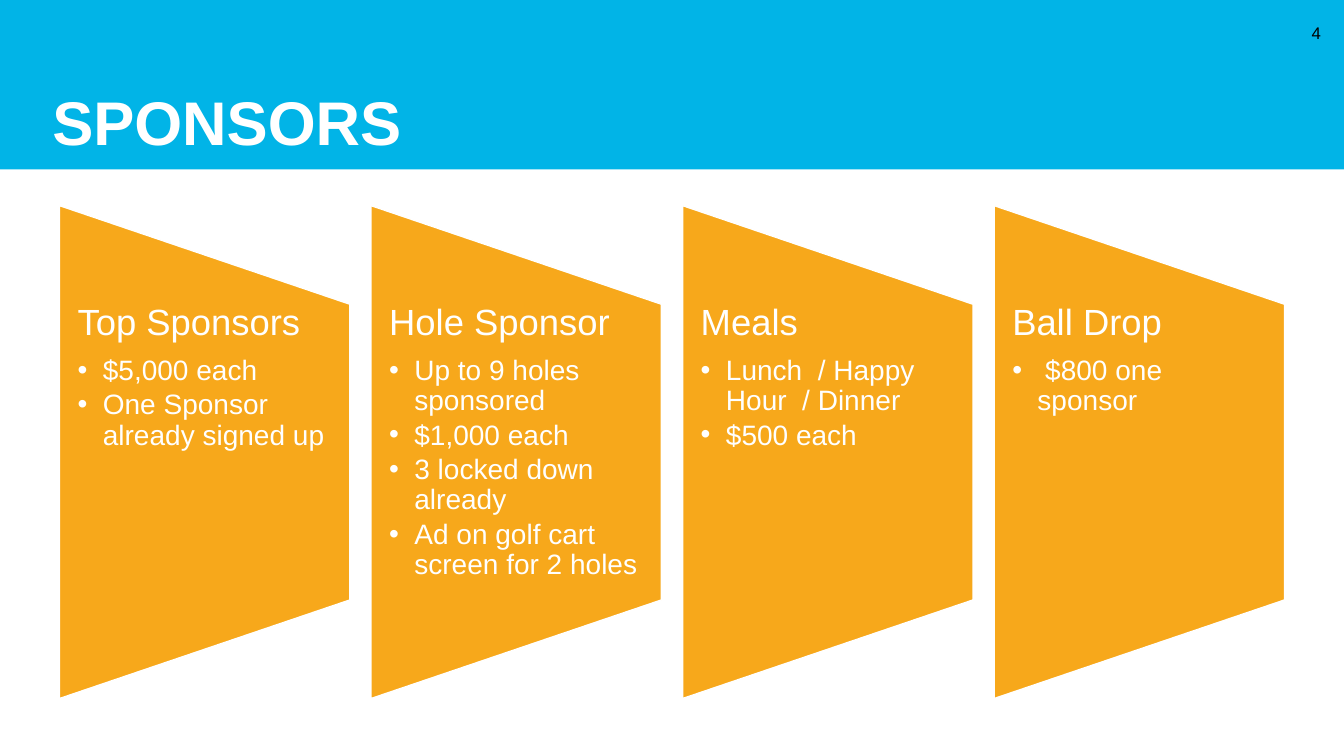
from lxml import etree
from pptx import Presentation
from pptx.dml.color import RGBColor
from pptx.enum.shapes import MSO_SHAPE
from pptx.enum.text import MSO_ANCHOR, PP_ALIGN
from pptx.oxml.ns import qn
from pptx.util import Inches, Pt

RECT = MSO_SHAPE.RECTANGLE
TRAP = MSO_SHAPE.FLOWCHART_MANUAL_OPERATION
TOP, MIDDLE, BOTTOM = MSO_ANCHOR.TOP, MSO_ANCHOR.MIDDLE, MSO_ANCHOR.BOTTOM
LEFT, RIGHT = PP_ALIGN.LEFT, PP_ALIGN.RIGHT

COLORS = {"blue": "01B4E7", "gold": "F7A81B", "white": "FFFFFF", "black": "000000"}
WIDTH, HEIGHT = 13.33, 7.5
MARGIN, CARD_W, CARD_H = 0.59, 2.88, 4.89
SPONSORS = [
    ("Top Sponsors", ["$5,000 each", "One Sponsor already signed up"]),
    ("Hole Sponsor", ["Up to 9 holes sponsored", "$1,000 each",
                      "3 locked down already", "Ad on golf cart screen for 2 holes"]),
    ("Meals", ["Lunch  / Happy Hour  / Dinner", "$500 each"]),
    ("Ball Drop", [" $800 one sponsor"]),
]


def color(name):
    return RGBColor.from_string(COLORS[name])


def add_block(slide, kind, box, fill):
    shape = slide.shapes.add_shape(kind, *map(Inches, box))
    shape.shadow.inherit = False
    shape.fill.solid()
    shape.fill.fore_color.rgb = color(fill)
    shape.line.fill.background()
    return shape


def add_frame(slide, box, insets, anchor):
    frame = slide.shapes.add_textbox(*map(Inches, box)).text_frame
    frame.word_wrap = True
    frame.vertical_anchor = anchor
    (frame.margin_left, frame.margin_top,
     frame.margin_right, frame.margin_bottom) = map(Inches, insets)
    return frame


def style(para, size, tint="white", bold=False, align=LEFT):
    para.alignment = align
    font = para.runs[0].font
    font.name, font.size, font.bold = "Arial", Pt(size), bold
    font.color.rgb = color(tint)


def add_bullet(para):
    props = para._p.get_or_add_pPr()
    props.set("marL", str(Inches(0.25)))
    props.set("indent", str(-Inches(0.25)))
    etree.SubElement(props, qn("a:buFont")).set("typeface", "Arial")
    etree.SubElement(props, qn("a:buChar")).set("char", "•")


def add_header(slide, x, y, w, h):
    add_block(slide, RECT, (x, y, w, h), "blue")
    title = add_frame(slide, (x + 0.42, y, w - 0.75, h), (0.1, 0, 0.1, 0.1), BOTTOM)
    title.text = "SPONSORS"
    title.paragraphs[0].line_spacing = 0.9
    style(title.paragraphs[0], 44, bold=True)
    page = add_frame(slide, (x + w - 0.59, y + 0.13, 0.46, 0.4), (0, 0.05, 0.1, 0.05), MIDDLE)
    page.text = "4"
    style(page.paragraphs[0], 12, "black", align=RIGHT)


def add_card(slide, x, y, w, h, head, items):
    turn = (h - w) / 2
    panel = add_block(slide, TRAP, (x - turn, y + turn, h, w), "gold")
    panel.rotation = 270
    panel.line.color.rgb = color("white")
    panel.line.width = Pt(1)

    frame = add_frame(slide, (x, y + h * 0.2, w, h * 0.6), (0.18, 0, 0.18, 0), TOP)
    para = frame.paragraphs[0]
    para.text = head
    para.line_spacing, para.space_after = 0.9, Pt(9.1)
    style(para, 26)
    for item in items:
        para = frame.add_paragraph()
        para.text = item
        add_bullet(para)
        para.line_spacing, para.space_after = 0.9, Pt(3)
        style(para, 20)


def main():
    deck = Presentation()
    deck.slide_width, deck.slide_height = Inches(WIDTH), Inches(HEIGHT)
    slide = deck.slides.add_slide(deck.slide_layouts[6])
    add_header(slide, 0, 0, WIDTH, 1.68)
    step = (WIDTH - 2 * MARGIN - CARD_W) / (len(SPONSORS) - 1)
    for i, (head, items) in enumerate(SPONSORS):
        add_card(slide, MARGIN + i * step, 2.04, CARD_W, CARD_H, head, items)
    deck.save("out.pptx")


if __name__ == "__main__":
    main()
